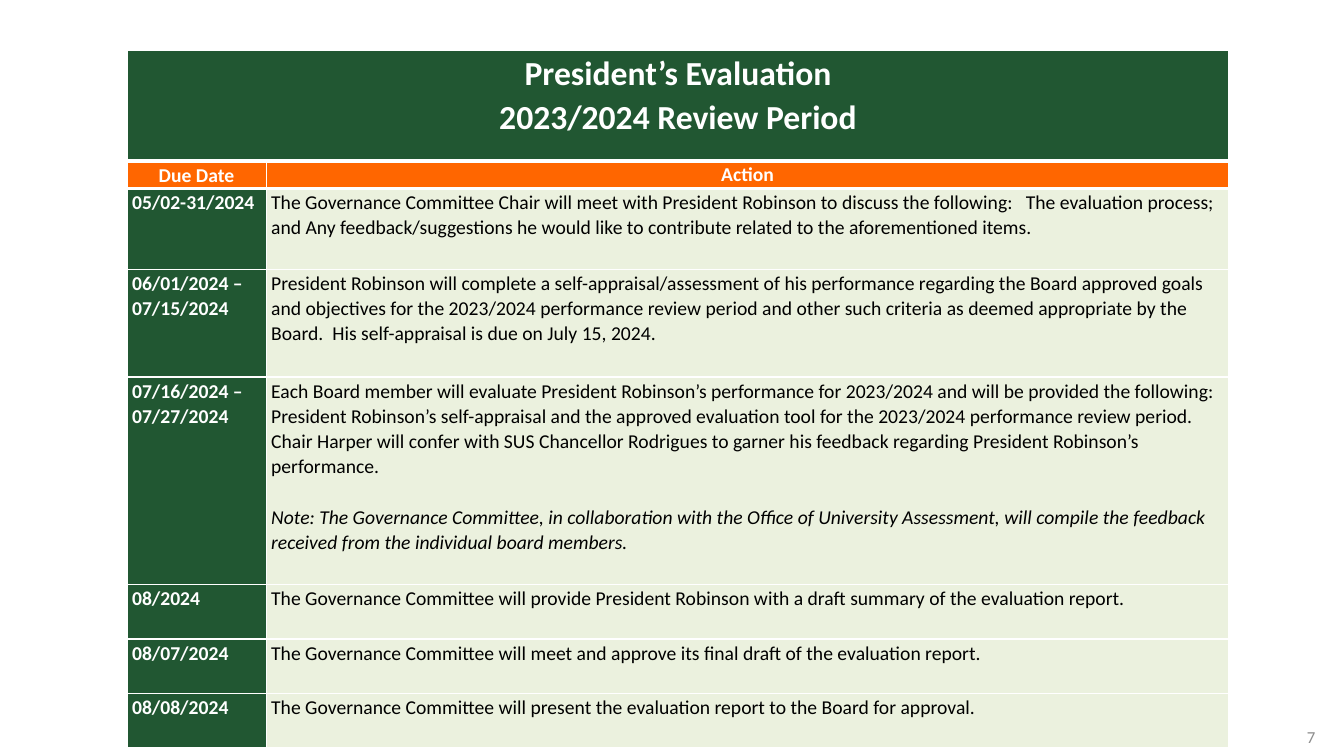
from dataclasses import dataclass

from lxml import etree
from pptx import Presentation
from pptx.dml.color import RGBColor
from pptx.enum.text import MSO_ANCHOR, PP_ALIGN
from pptx.oxml.ns import qn
from pptx.table import _Cell
from pptx.text.text import TextFrame
from pptx.util import Emu, Inches, Pt

LEFT, CENTER, RIGHT = PP_ALIGN.LEFT, PP_ALIGN.CENTER, PP_ALIGN.RIGHT
MIDDLE = MSO_ANCHOR.MIDDLE

GREEN = RGBColor(0x21, 0x57, 0x32)
ORANGE = RGBColor(0xFF, 0x66, 0x00)
CREAM = RGBColor(0xEB, 0xF1, 0xDE)
WHITE = RGBColor(0xFF, 0xFF, 0xFF)
BLACK = RGBColor(0x00, 0x00, 0x00)
GRAY = RGBColor(0x8C, 0x8C, 0x8C)

FONT = "Calibri"
SLIDE_WIDTH, SLIDE_HEIGHT = Inches(13.33), Inches(7.5)
GRID = 100
COLUMN_SPANS = (10.35, 71.65)
TITLE_SPAN, HEADER_SPAN = 14.67, 3.6
THIN, THICK = Pt(1), Pt(3)


@dataclass(frozen=True)
class TextStyle:
    color: RGBColor
    size: float = 14
    bold: bool = False
    align: PP_ALIGN = LEFT
    line_spacing: float = 1.06


@dataclass(frozen=True)
class Step:
    due: str
    action: str
    row_span: float
    note: str = ""


TITLE_STYLE = TextStyle(WHITE, size=24, bold=True, align=CENTER)
HEADER_STYLE = TextStyle(WHITE, bold=True, align=CENTER)
DATE_STYLE = TextStyle(WHITE, bold=True)
ACTION_STYLE = TextStyle(BLACK)
NUMBER_STYLE = TextStyle(GRAY, size=12, align=RIGHT, line_spacing=1.0)

TITLE_LINES = ("President’s Evaluation", "2023/2024 Review Period")
HEADERS = ("Due Date", "Action")
STEPS = (
    Step(
        "05/02-31/2024",
        "The Governance Committee Chair will meet with President Robinson to discuss "
        "the following:   The evaluation process; and Any feedback/suggestions he would "
        "like to contribute related to the aforementioned items.",
        10.67,
    ),
    Step(
        "06/01/2024 – 07/15/2024",
        "President Robinson will complete a self-appraisal/assessment of his performance "
        "regarding the Board approved goals and objectives for the 2023/2024 performance "
        "review period and other such criteria as deemed appropriate by the Board.  His "
        "self-appraisal is due on July 15, 2024.",
        14.27,
    ),
    Step(
        "07/16/2024 – 07/27/2024",
        "Each Board member will evaluate President Robinson’s performance for 2023/2024 "
        "and will be provided the following:  President Robinson’s self-appraisal and the "
        "approved evaluation tool for the 2023/2024 performance review period.  Chair "
        "Harper will confer with SUS Chancellor Rodrigues to garner his feedback "
        "regarding President Robinson’s performance.",
        27.47,
        "Note: The Governance Committee, in collaboration with the Office of University "
        "Assessment, will compile the feedback received from the individual board members.",
    ),
    Step(
        "08/2024",
        "The Governance Committee will provide President Robinson with a draft summary "
        "of the evaluation report.",
        7.2,
    ),
    Step(
        "08/07/2024",
        "The Governance Committee will meet and approve its final draft of the "
        "evaluation report.",
        7.2,
    ),
    Step(
        "08/08/2024",
        "The Governance Committee will present the evaluation report to the Board for "
        "approval.",
        7.2,
    ),
)


def columns(count: float) -> Emu:
    return Emu(round(SLIDE_WIDTH * count / GRID))


def rows(count: float) -> Emu:
    return Emu(round(SLIDE_HEIGHT * count / GRID))


def write(frame: TextFrame, lines: tuple[str, ...], style: TextStyle) -> None:
    frame.word_wrap = True
    for index, line in enumerate(lines):
        paragraph = frame.add_paragraph() if index else frame.paragraphs[0]
        paragraph.alignment = style.align
        paragraph.line_spacing = style.line_spacing
        run = paragraph.add_run()
        run.text = line
        run.font.name = FONT
        run.font.size = Pt(style.size)
        run.font.bold = style.bold
        run.font.color.rgb = style.color


def add_borders(cell: _Cell, top: Emu, bottom: Emu) -> None:
    properties = cell._tc.get_or_add_tcPr()
    widths = {"lnL": THIN, "lnR": THIN, "lnT": top, "lnB": bottom}
    for side, width in widths.items():
        line = etree.SubElement(properties, qn(f"a:{side}"), w=str(width))
        fill = etree.SubElement(line, qn("a:solidFill"))
        etree.SubElement(fill, qn("a:srgbClr"), val=str(WHITE))


def dress(cell: _Cell, color: RGBColor, row: int) -> None:
    add_borders(cell, THICK if row in (1, 2) else THIN, THICK if row < 2 else THIN)
    cell.fill.solid()
    cell.fill.fore_color.rgb = color
    cell.margin_left = cell.margin_right = Inches(0.05)
    cell.margin_top, cell.margin_bottom = Inches(0.01), 0


def add_schedule(slide) -> None:
    row_spans = (TITLE_SPAN, HEADER_SPAN, *(step.row_span for step in STEPS))
    schedule = slide.shapes.add_table(
        len(row_spans), len(COLUMN_SPANS), columns(9.45), rows(6.67),
        columns(sum(COLUMN_SPANS)), rows(sum(row_spans)),
    ).table
    schedule.first_row = schedule.horz_banding = False
    for column, span in zip(schedule.columns, COLUMN_SPANS):
        column.width = columns(span)
    for row, span in zip(schedule.rows, row_spans):
        row.height = rows(span)

    for index, header in enumerate(HEADERS):
        dress(schedule.cell(0, index), GREEN, 0)
        header_cell = schedule.cell(1, index)
        dress(header_cell, ORANGE, 1)
        write(header_cell.text_frame, (header,), HEADER_STYLE)
    action_header = schedule.cell(1, 1)
    action_header.margin_left = action_header.margin_right = action_header.margin_top = 0

    title_cell = schedule.cell(0, 0)
    title_cell.merge(schedule.cell(0, 1))
    write(title_cell.text_frame, TITLE_LINES, TITLE_STYLE)

    for row, step in enumerate(STEPS, start=2):
        date_cell, action_cell = schedule.cell(row, 0), schedule.cell(row, 1)
        dress(date_cell, GREEN, row)
        dress(action_cell, CREAM, row)
        write(date_cell.text_frame, (step.due,), DATE_STYLE)
        action_lines = (step.action, step.note) if step.note else (step.action,)
        write(action_cell.text_frame, action_lines, ACTION_STYLE)
        for note in action_cell.text_frame.paragraphs[1:]:
            note.space_before = Pt(18)
            note.runs[0].font.italic = True


def add_slide_number(slide) -> None:
    page_number = slide.shapes.add_textbox(columns(95.2), rows(95.2), columns(3.4), rows(4.4))
    page_number.text_frame.vertical_anchor = MIDDLE
    write(page_number.text_frame, ("7",), NUMBER_STYLE)


def main() -> None:
    deck = Presentation()
    deck.slide_width, deck.slide_height = SLIDE_WIDTH, SLIDE_HEIGHT
    slide = deck.slides.add_slide(deck.slide_layouts[6])
    add_slide_number(slide)
    add_schedule(slide)
    deck.save("out.pptx")


if __name__ == "__main__":
    main()
